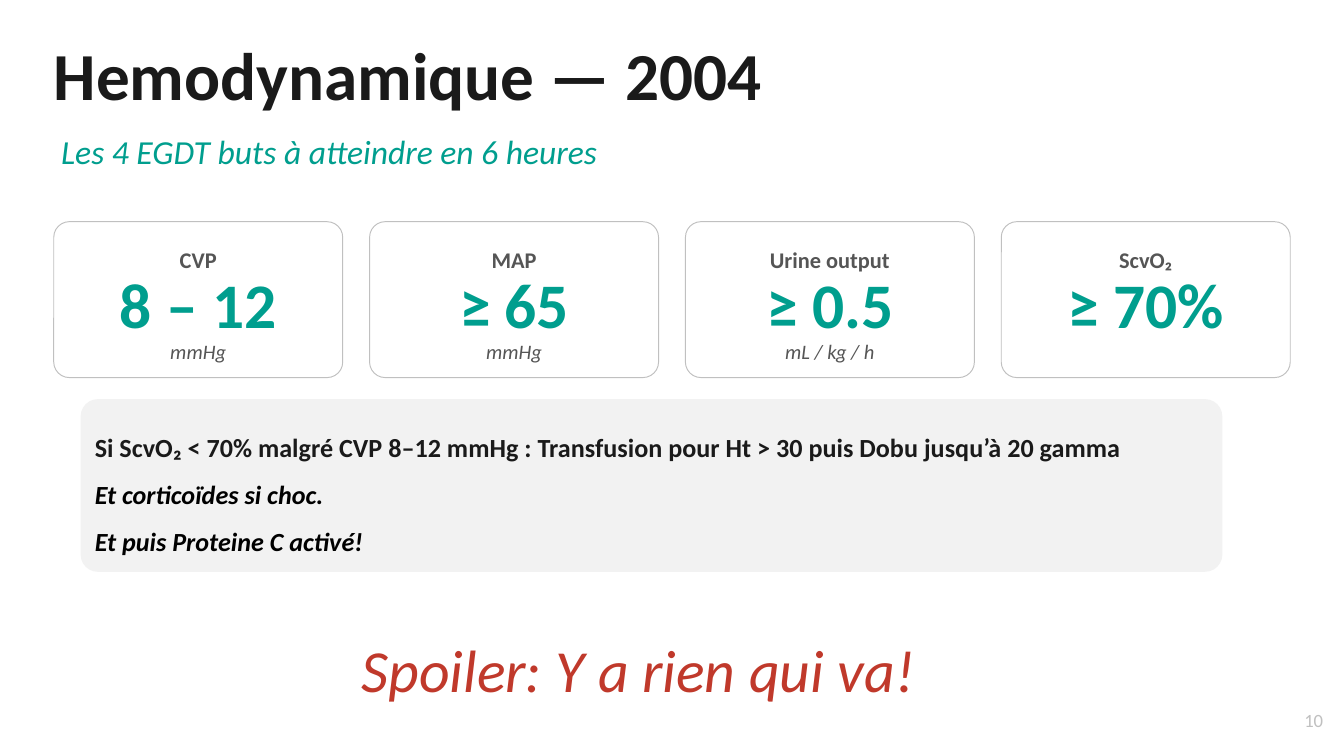
import dataclasses

import pptx
import pptx.dml.color
import pptx.enum.shapes
import pptx.enum.text
import pptx.util

PX = 4572  # EMU per px, 200 px to the inch
ALIGN = pptx.enum.text.PP_ALIGN


@dataclasses.dataclass(frozen=True)
class Theme:
    font: str = "Calibri"
    white: str = "FFFFFF"
    ink: str = "1A1A1A"
    black: str = "000000"
    muted: str = "555555"
    border: str = "C0C0C0"
    panel: str = "F2F2F2"
    accent: str = "009E8E"
    alert: str = "C0392B"
    title: int = 36
    value: int = 34
    spoiler: int = 32
    subtitle: int = 18
    note: int = 14
    label: int = 12
    unit: int = 11
    number: int = 10


THEME = Theme()

GOALS = [
    ("CVP", "8 – 12", "mmHg"),
    ("MAP", "≥ 65", "mmHg"),
    ("Urine output", "≥ 0.5", "mL / kg / h"),
    ("ScvO₂", "≥ 70%", None),
]
NOTES = [
    "Si ScvO₂ < 70% malgré CVP 8–12 mmHg : Transfusion pour Ht > 30 puis Dobu jusqu’à 20 gamma",
    "Et corticoïdes si choc.",
    "Et puis Proteine C activé!",
]


def px(*lengths):
    return [pptx.util.Emu(n * PX) for n in lengths]


def rgb(color):
    return pptx.dml.color.RGBColor.from_string(color)


def format_paragraph(p, size, color, bold=False, italic=False, align=ALIGN.LEFT):
    p.alignment = align
    for r in p.runs:
        r.font.name = THEME.font
        r.font.size = pptx.util.Pt(size)
        r.font.color.rgb = rgb(color)
        r.font.bold = bold
        r.font.italic = italic


def set_frame(tf, inset_x, inset_y, wrap):
    tf.margin_left, tf.margin_right = px(inset_x, inset_x)
    tf.margin_top, tf.margin_bottom = px(inset_y, inset_y)
    tf.word_wrap = wrap
    tf.auto_size = pptx.enum.text.MSO_AUTO_SIZE.SHAPE_TO_FIT_TEXT
    tf.vertical_anchor = pptx.enum.text.MSO_ANCHOR.TOP


def add_title(s, text, box):
    sp = s.shapes.title
    sp.left, sp.top, sp.width, sp.height = px(*box)
    sp.text_frame.text = text
    set_frame(sp.text_frame, 0, 0, False)
    format_paragraph(sp.text_frame.paragraphs[0], THEME.title, THEME.ink, bold=True)


def add_text(s, text, box, size, color, **style):
    tf = s.shapes.add_textbox(*px(*box)).text_frame
    tf.text = text
    set_frame(tf, 11, 5, True)
    for p in tf.paragraphs:
        format_paragraph(p, size, color, **style)
    return tf


def add_panel(s, box, fill, line=None):
    sp = s.shapes.add_shape(pptx.enum.shapes.MSO_SHAPE.ROUNDED_RECTANGLE, *px(*box))
    sp.adjustments[0] = 0.1
    sp.shadow.inherit = False
    sp.fill.solid()
    sp.fill.fore_color.rgb = rgb(fill)
    if line:
        sp.line.color.rgb = rgb(line)
        sp.line.width = pptx.util.Pt(0.5)
    else:
        sp.line.fill.background()


def add_goal(s, x, label, value, unit):
    width = 430
    add_panel(s, (x, 330, width, 232), THEME.white, THEME.border)
    add_text(s, label, (x, 362, width, 80), THEME.label, THEME.muted,
             bold=True, align=ALIGN.CENTER)
    add_text(s, value, (x, 390, width, 140 if unit else 126),
             THEME.value, THEME.accent, bold=True, align=ALIGN.CENTER)
    if unit:
        add_text(s, unit, (x, 500, width, 60), THEME.unit, THEME.muted,
                 italic=True, align=ALIGN.CENTER)


def add_notes_panel(s):
    add_panel(s, (120, 594, 1699, 257), THEME.panel)
    tf = add_text(s, "\n".join(NOTES), (130, 613, 1642, 270),
                  THEME.note, THEME.ink, bold=True)
    for p in tf.paragraphs:
        p.line_spacing = 1.5
    for p in tf.paragraphs[1:]:
        format_paragraph(p, THEME.note, THEME.black, bold=True, italic=True)


def main():
    prs = pptx.Presentation()
    prs.slide_width, prs.slide_height = px(2000, 1125)
    s = prs.slides.add_slide(prs.slide_layouts.get_by_name("Title Only"))

    # Heading
    add_title(s, "Hemodynamique — 2004", (80, 50, 1066, 122))
    add_text(s, "Les 4 EGDT buts à atteindre en 6 heures", (80, 190, 1600, 72),
             THEME.subtitle, THEME.accent, italic=True)

    # Goal cards
    for i, goal in enumerate(GOALS):
        add_goal(s, 80 + i * 470, *goal)

    # Treatment notes
    add_notes_panel(s)

    # Page number and closing line
    add_text(s, "10", (1920, 1050, 60, 60), THEME.number, THEME.border,
             align=ALIGN.RIGHT)
    add_text(s, "Spoiler: Y a rien qui va!", (30, 936, 1840, 118),
             THEME.spoiler, THEME.alert, italic=True, align=ALIGN.CENTER)

    prs.save("out.pptx")


if __name__ == "__main__":
    main()
